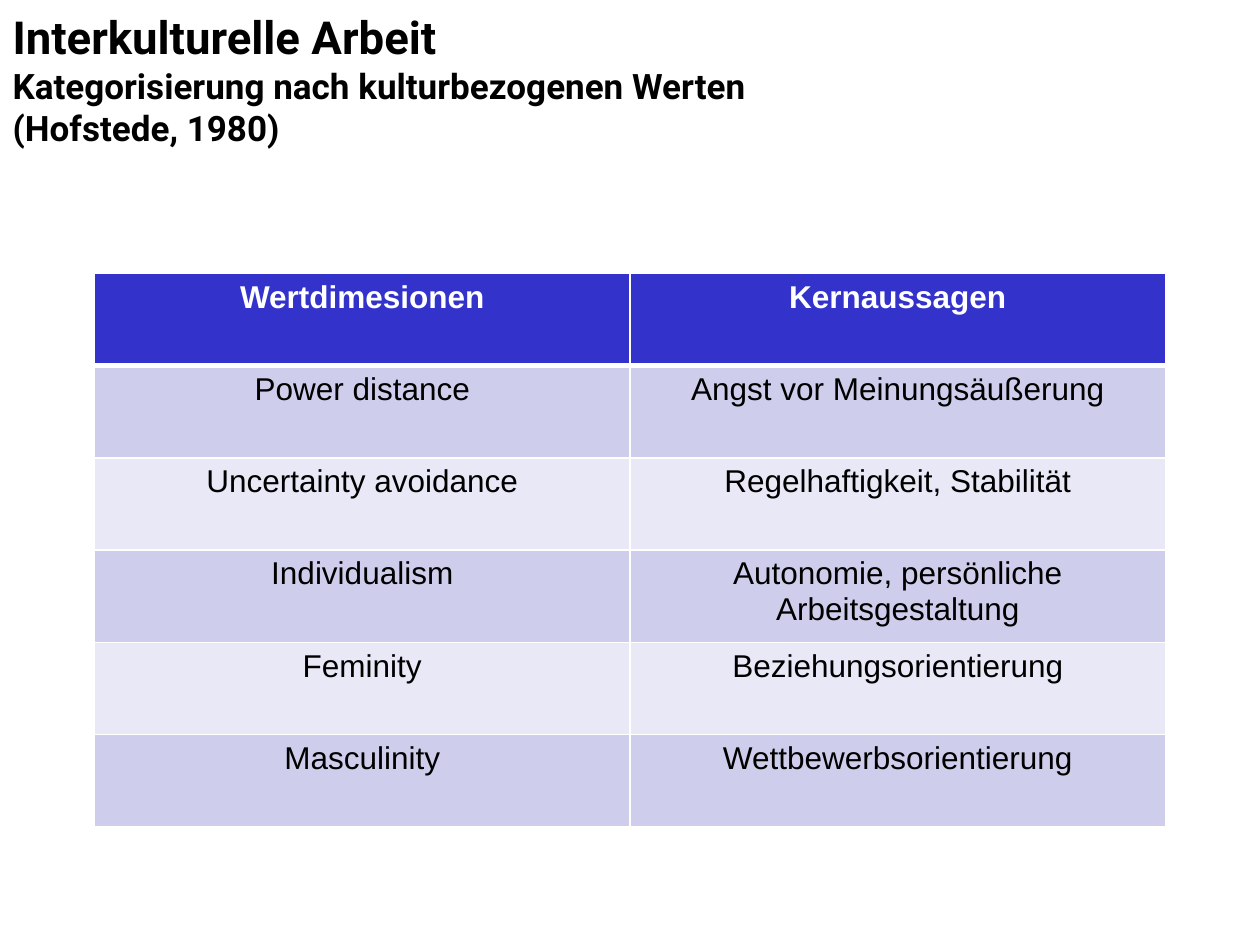
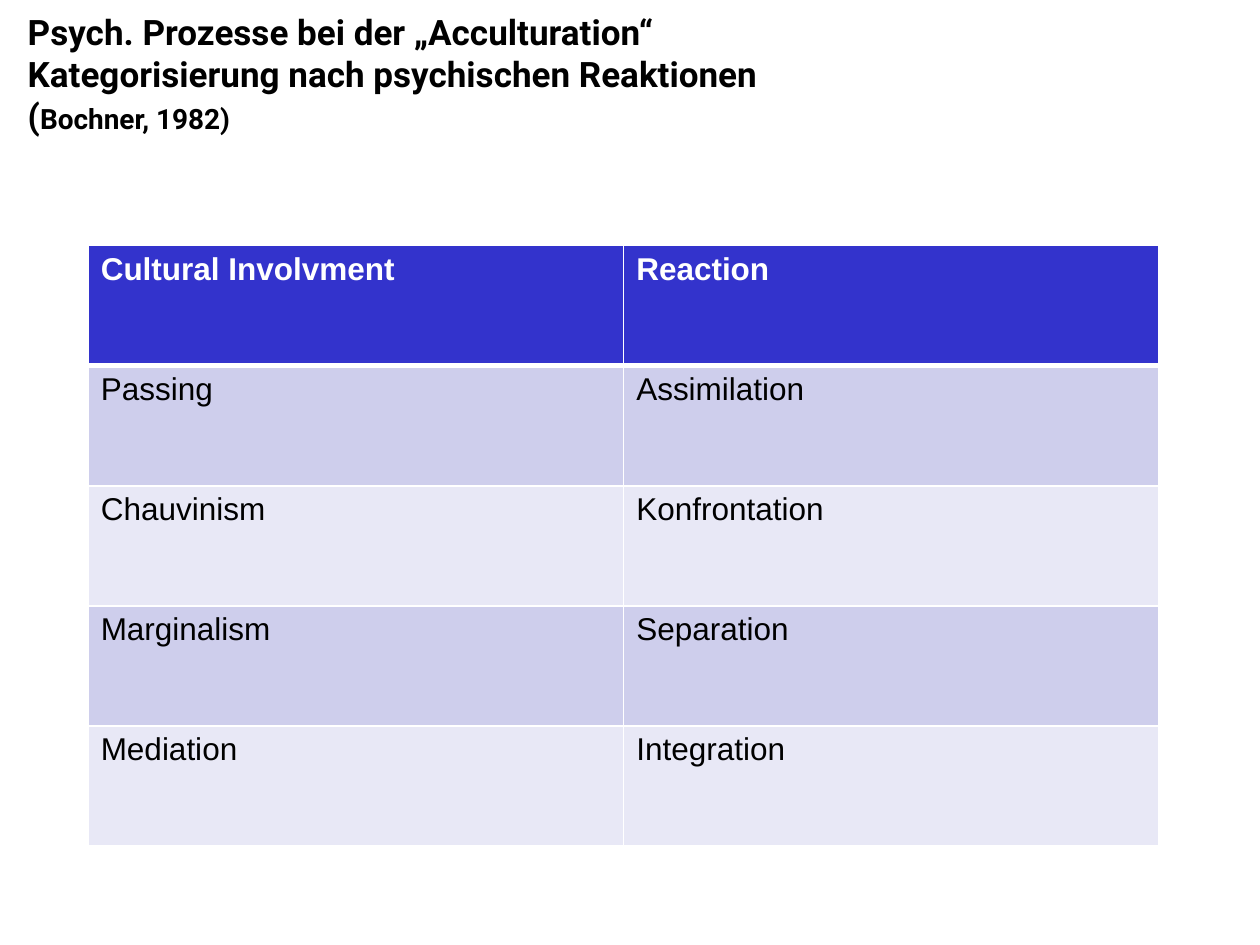
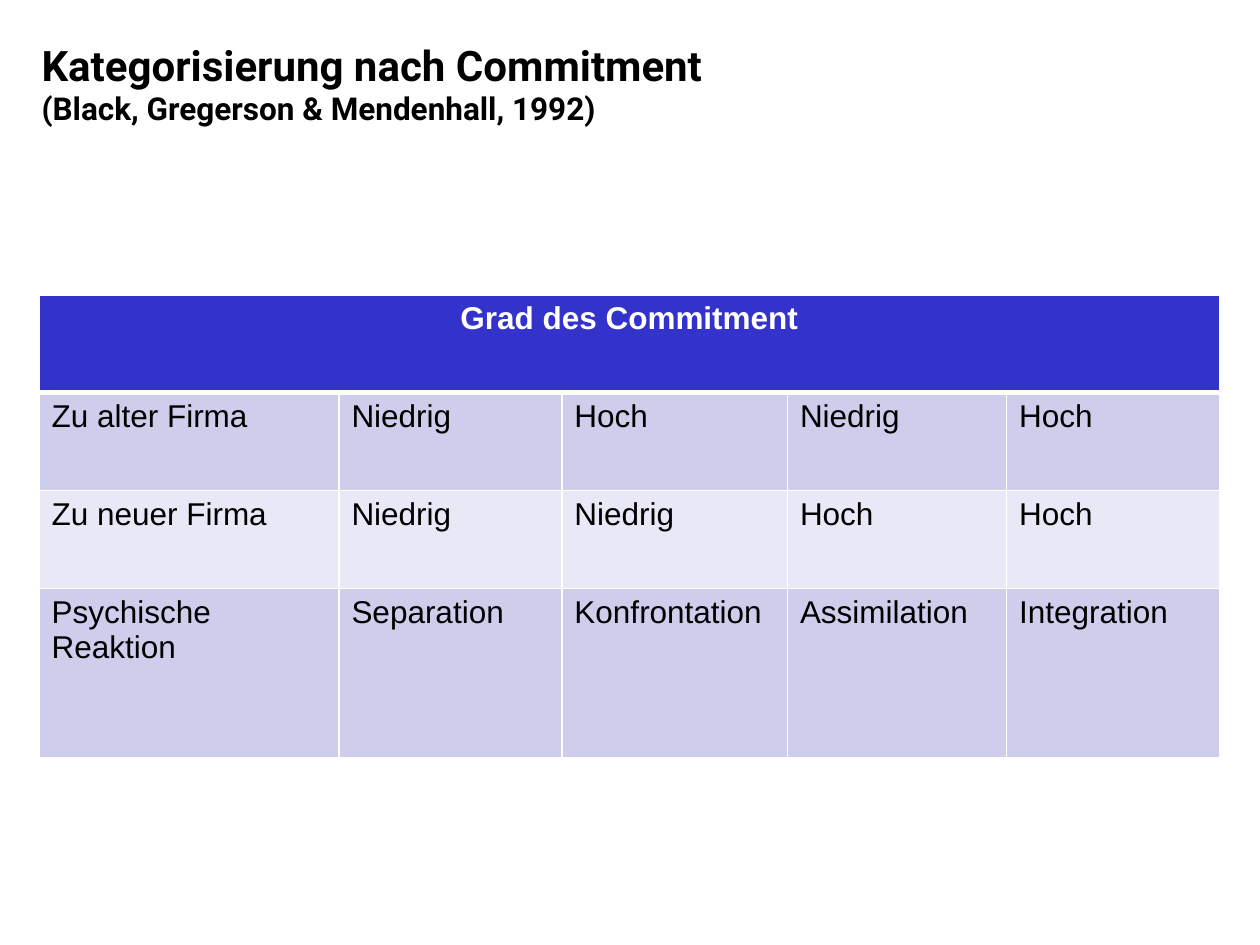
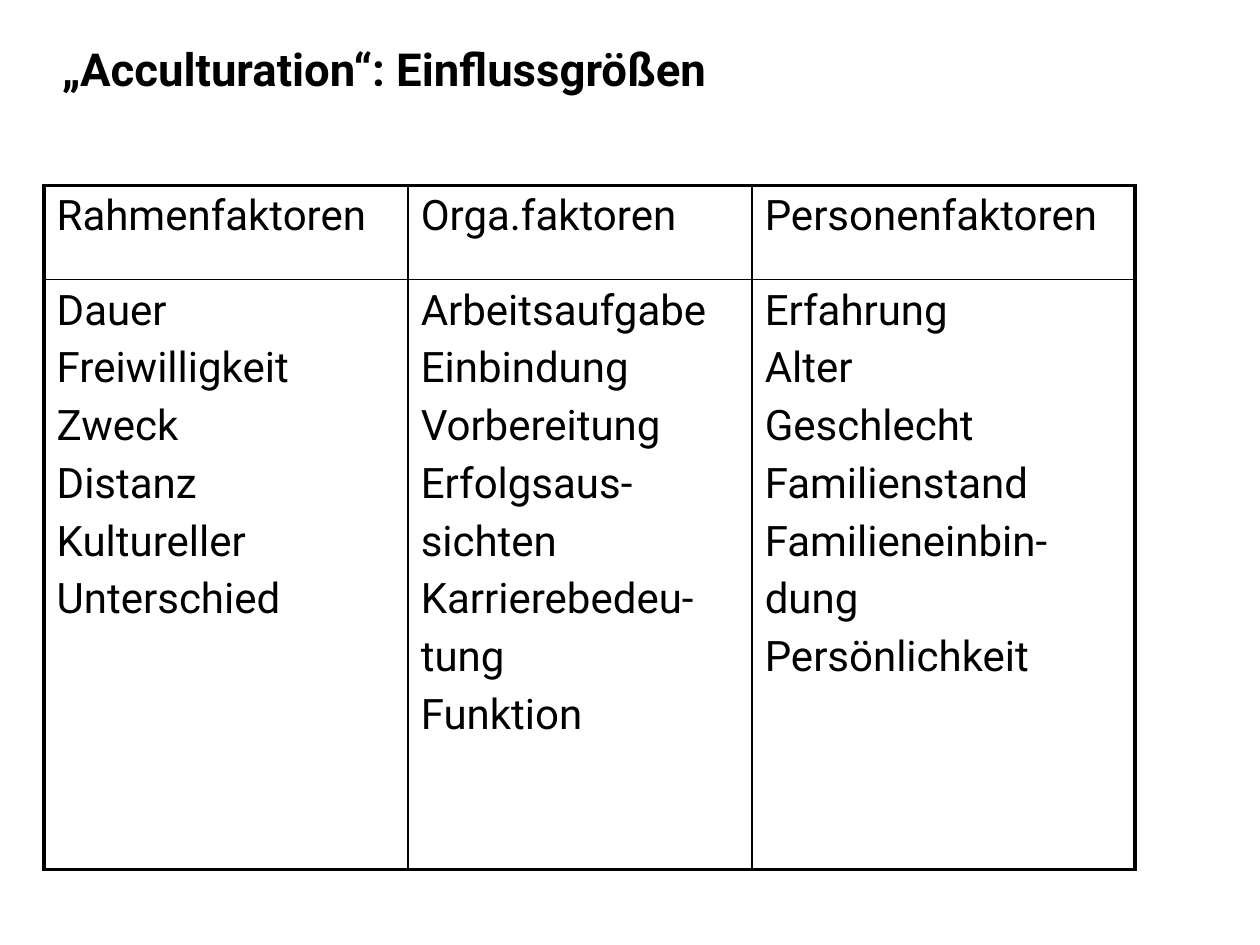
from lxml.etree import SubElement as Sub
from pptx import Presentation
from pptx.dml.color import RGBColor as Rgb
from pptx.enum.text import MSO_ANCHOR as Anchor, MSO_AUTO_SIZE as Fit, PP_ALIGN as Align
from pptx.oxml.ns import qn
from pptx.util import Inches, Pt

BLACK, WHITE, BLUE = "000000", "FFFFFF", "3333CC"
BANDS = "CECEEC", "E8E8F6"
COLS, ROWS = 100, 75


def tint(color, code):
    color.rgb = Rgb.from_string(code)


class Deck:
    head, body = "Roboto", "Arial"

    def __init__(self):
        self.prs = Presentation()
        self.prs.slide_width, self.prs.slide_height = Inches(10), Inches(7.5)
        self.slide = None

    def place(self, x, y, w, h):
        col, row = self.prs.slide_width / COLS, self.prs.slide_height / ROWS
        return int(x * col), int(y * row), int(w * col), int(h * row)

    def style(self, para, face, size, code, bold=False):
        font = para.font
        font.name, font.size, font.bold = face, Pt(size), bold
        tint(font.color, code)

    def title(self, box, *parts):
        self.slide = self.prs.slides.add_slide(self.prs.slide_layouts[5])
        shape = self.slide.shapes.title
        shape.left, shape.top, shape.width, shape.height = self.place(*box)
        frame = shape.text_frame
        frame.word_wrap, frame.auto_size = True, Fit.NONE
        frame.vertical_anchor = Anchor.MIDDLE
        para = frame.paragraphs[0]
        para.alignment = Align.LEFT
        base = parts[0][1]
        self.style(para, self.head, base, BLACK, True)
        for text, size in parts:
            for num, line in enumerate(text.split("\n")):
                if num:
                    para.add_line_break()
                    Sub(para._p[-1], qn("a:rPr"), sz=str(size * 100))
                if line:
                    run = para.add_run()
                    run.text = line
                    if size != base:
                        run.font.size = Pt(size)

    def edges(self, cell, code, sizes):
        props = cell._tc.get_or_add_tcPr()
        for side, size in zip("LRTB", sizes):
            line = Sub(props, qn(f"a:ln{side}"), w=str(Pt(size)))
            fill = Sub(line, qn("a:solidFill"))
            Sub(fill, qn("a:srgbClr"), val=code)

    def grid(self, spot, wide, high, data, plain=False, mid=()):
        count, last = len(wide), len(high) - 1
        shape = self.slide.shapes.add_table(
            len(high), count, *self.place(*spot, sum(wide), sum(high)))
        table = shape.table
        table.first_row = table.horz_banding = False
        for col, w in zip(table.columns, wide):
            col.width = self.place(0, 0, w, 0)[2]
        for row, h in zip(table.rows, high):
            row.height = self.place(0, 0, 0, h)[3]
        ink, outer, neck = (BLACK, 2.25, 1) if plain else (WHITE, 1, 3)
        across = [outer, neck] + [1] * (last - 1) + [outer]
        down = [outer] + [1] * (count - 1) + [outer]
        for r, texts in enumerate(data):
            for c in range(count):
                cell = table.cell(r, c)
                self.edges(cell, ink, (*down[c:c + 2], *across[r:r + 2]))
                if plain:
                    cell.fill.background()
                else:
                    cell.fill.solid()
                    tint(cell.fill.fore_color, BANDS[(r - 1) % 2] if r else BLUE)
            if len(texts) < count:
                table.cell(r, 0).merge(table.cell(r, count - 1))
            for c, text in enumerate(texts):
                self.label(table.cell(r, c), text, plain, r == 0, r in mid)

    def label(self, cell, text, plain, top, mid):
        frame = cell.text_frame
        frame.text = text
        for num, para in enumerate(frame.paragraphs):
            para.alignment = Align.CENTER if mid else Align.LEFT
            if plain:
                if num:
                    para.space_before = Pt(4.8)
                self.style(para, self.head, 24, BLACK)
            else:
                self.style(para, self.body, 18, WHITE if top else BLACK, top)


def main():
    deck = Deck()

    deck.title((0, 0, 85, 12.5), ("Interkulturelle Arbeit\n", 26),
               ("Kategorisierung nach kulturbezogenen Werten\n(Hofstede, 1980)", 20))
    values = [
        ("Wertdimesionen", "Kernaussagen"),
        ("Power distance", "Angst vor Meinungsäußerung"),
        ("Uncertainty avoidance", "Regelhaftigkeit, Stabilität"),
        ("Individualism", "Autonomie, persönliche Arbeitsgestaltung"),
        ("Feminity", "Beziehungsorientierung"),
        ("Masculinity", "Wettbewerbsorientierung"),
    ]
    deck.grid((7.5, 21.7), [42.5] * 2, [7.32] * 6, values, mid=range(6))

    deck.title((1.2, 0, 98.8, 11.7),
               ("Psych. Prozesse bei der „Acculturation“\n"
                "Kategorisierung nach psychischen Reaktionen\n(", 20),
               ("Bochner, 1982)", 16))
    moods = [
        ("Cultural Involvment", "Reaction"),
        ("Passing", "Assimilation"),
        ("Chauvinism", "Konfrontation"),
        ("Marginalism", "Separation"),
        ("Mediation", "Integration"),
    ]
    deck.grid((7, 19.5), [42.5] * 2, [9.53] * 5, moods)

    deck.title((2.3, -2.3, 87.3, 17.8), ("Kategorisierung nach Commitment\n", 24),
               ("(Black, Gregerson & Mendenhall, 1992)", 18))
    bonds = [
        ("Grad des Commitment",),
        ("Zu alter Firma", "Niedrig", "Hoch", "Niedrig", "Hoch"),
        ("Zu neuer Firma", "Niedrig", "Niedrig", "Hoch", "Hoch"),
        ("Psychische Reaktion", "Separation", "Konfrontation",
         "Assimilation", "Integration"),
    ]
    deck.grid((3.1, 23.4), [23.8, 17.7, 17.9, 17.4, 16.9],
              [7.77] * 3 + [13.4], bonds, mid=(0,))

    deck.title((3.9, 0, 88.6, 10.9), ("„Acculturation“: Einflussgrößen", 26))
    factors = [
        ("Rahmenfaktoren", "Orga.faktoren", "Personenfaktoren"),
        ("Dauer\nFreiwilligkeit\nZweck\nDistanz\nKultureller\nUnterschied",
         "Arbeitsaufgabe\nEinbindung\nVorbereitung\nErfolgsaus-\nsichten\n"
         "Karrierebedeu-\ntung\nFunktion",
         "Erfahrung\nAlter\nGeschlecht\nFamilienstand\nFamilieneinbin-\n"
         "dung\nPersönlichkeit"),
    ]
    deck.grid((3.5, 14.7), [28.9, 27.3, 30.4], [7.5, 46.8], factors, plain=True)

    deck.prs.save("out.pptx")


if __name__ == "__main__":
    main()
